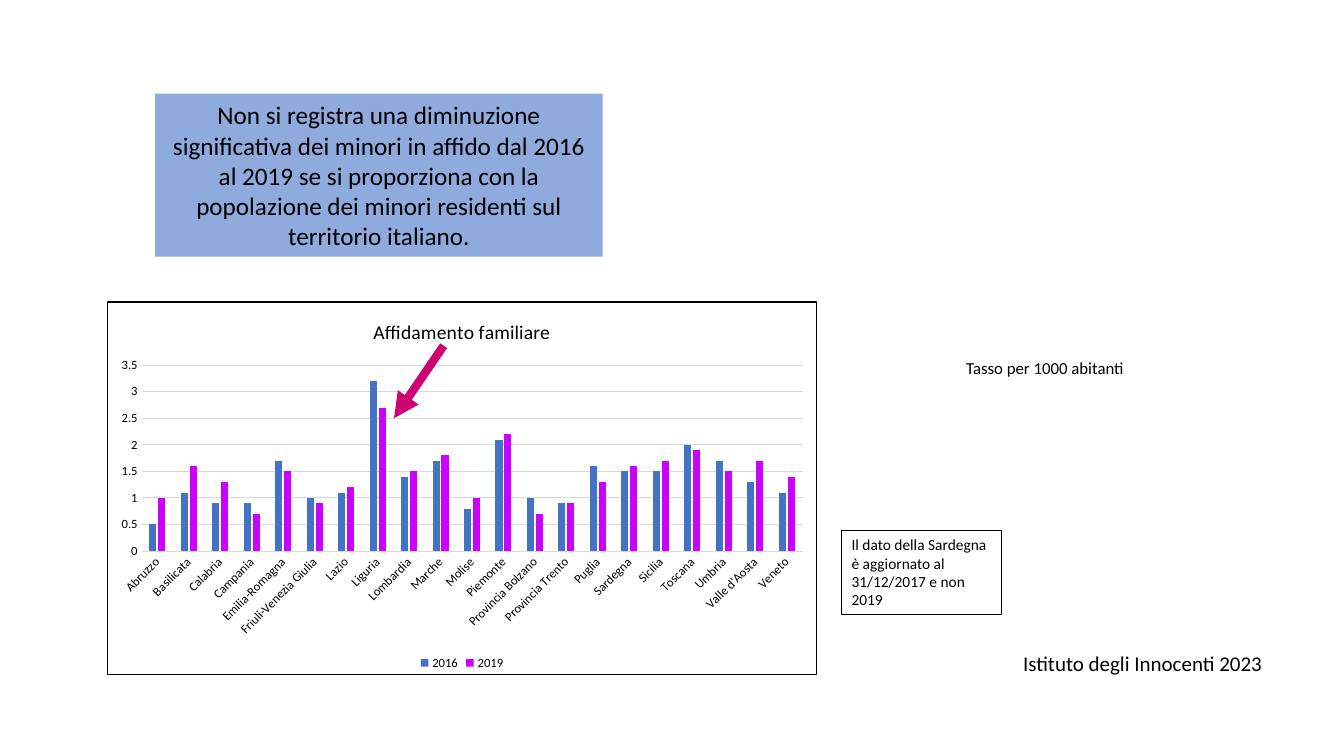
from lxml import etree
from pptx import Presentation
from pptx.chart.data import CategoryChartData
from pptx.dml.color import RGBColor
from pptx.enum.chart import XL_CHART_TYPE, XL_LEGEND_POSITION, XL_TICK_MARK
from pptx.enum.shapes import MSO_CONNECTOR, MSO_SHAPE
from pptx.enum.text import MSO_ANCHOR, MSO_AUTO_SIZE, PP_ALIGN
from pptx.oxml import parse_xml
from pptx.oxml.ns import qn
from pptx.util import Cm, Pt

COLUMNS = XL_CHART_TYPE.COLUMN_CLUSTERED
BOTTOM = XL_LEGEND_POSITION.BOTTOM
NO_TICK = XL_TICK_MARK.NONE
STRAIGHT = MSO_CONNECTOR.STRAIGHT
RECT = MSO_SHAPE.RECTANGLE
TOP, MIDDLE = MSO_ANCHOR.TOP, MSO_ANCHOR.MIDDLE
NO_FIT = MSO_AUTO_SIZE.NONE
LEFT, CENTER = PP_ALIGN.LEFT, PP_ALIGN.CENTER

FONT = "Calibri"
COLORS = {"black": "000000", "white": "FFFFFF", "grid": "D9D9D9", "box": "8FAADC",
          "2016": "4472C4", "2019": "CC00FF", "arrow": "CF0072"}


def set_font(font, size):
    font.name = FONT
    font.size = Pt(size)
    font.bold = False
    font.color.rgb = RGBColor.from_string(COLORS["black"])


def add_text(sp, text, size, align=LEFT, anchor=TOP, wrap=True):
    tf = sp.text_frame
    tf.word_wrap = wrap
    tf.auto_size = NO_FIT
    tf.vertical_anchor = anchor
    p = tf.paragraphs[0]
    p.alignment = align
    p.line_spacing = 1.0
    r = p.add_run()
    r.text = text
    set_font(r.font, size)


prs = Presentation()
prs.slide_width, prs.slide_height = Cm(33.87), Cm(19.05)
s = prs.slides.add_slide(prs.slide_layouts[5])

# Headline box
title = s.shapes.title
title.left, title.top, title.width, title.height = Cm(3.91), Cm(2.36), Cm(11.28), Cm(4.11)
title.fill.solid()
title.fill.fore_color.rgb = RGBColor.from_string(COLORS["box"])
add_text(title, "Non si registra una diminuzione significativa dei minori in affido "
         "dal 2016 al 2019 se si proporziona con la popolazione dei minori residenti "
         "sul territorio italiano.", 18, CENTER, MIDDLE)

# Rates by region: 2016, 2019
rates = {
    "Abruzzo": (0.5, 1), "Basilicata": (1.1, 1.6), "Calabria": (0.9, 1.3),
    "Campania": (0.9, 0.7), "Emilia-Romagna": (1.7, 1.5),
    "Friuli-Venezia Giulia": (1, 0.9), "Lazio": (1.1, 1.2), "Liguria": (3.2, 2.7),
    "Lombardia": (1.4, 1.5), "Marche": (1.7, 1.8), "Molise": (0.8, 1),
    "Piemonte": (2.1, 2.2), "Provincia Bolzano": (1, 0.7),
    "Provincia Trento": (0.9, 0.9), "Puglia": (1.6, 1.3), "Sardegna": (1.5, 1.6),
    "Sicilia": (1.5, 1.7), "Toscana": (2, 1.9), "Umbria": (1.7, 1.5),
    "Valle d'Aosta": (1.3, 1.7), "Veneto": (1.1, 1.4),
}
data = CategoryChartData()
data.categories = list(rates)
for year, values in zip(("2016", "2019"), zip(*rates.values())):
    data.add_series(year, values)
chart = s.shapes.add_chart(COLUMNS, Cm(2.69), Cm(7.59), Cm(17.91), Cm(9.42), data).chart
set_font(chart.font, 10)

# Chart title and legend
chart.has_title = True
r = chart.chart_title.text_frame.paragraphs[0].add_run()
r.text = "Affidamento familiare"
set_font(r.font, 14)
chart.has_legend = True
chart.legend.position = BOTTOM
chart.legend.include_in_layout = False
set_font(chart.legend.font, 9)

# Columns
plot = chart.plots[0]
plot.vary_by_categories = False
plot.gap_width, plot.overlap = 219, -27
for series in plot.series:
    series.format.fill.solid()
    series.format.fill.fore_color.rgb = RGBColor.from_string(COLORS[series.name])

# Axes
cat_axis, val_axis = chart.category_axis, chart.value_axis
for axis in (cat_axis, val_axis):
    axis.major_tick_mark = axis.minor_tick_mark = NO_TICK
    set_font(axis.tick_labels.font, 9)
val_axis.minimum_scale, val_axis.maximum_scale, val_axis.major_unit = 0, 3.5, 0.5
val_axis.tick_labels.number_format = "General"
val_axis.tick_labels.number_format_is_linked = False
val_axis.format.line.fill.background()
for line in (cat_axis.format.line, val_axis.major_gridlines.format.line):
    line.color.rgb = RGBColor.from_string(COLORS["grid"])
    line.width = Pt(0.75)
label_body = chart.element.xpath(".//c:catAx/c:txPr/a:bodyPr")[0]
label_body.set("rot", "-2700000")
label_body.set("vert", "horz")

# Chart frame
frame = parse_xml(
    '<c:spPr xmlns:c="http://schemas.openxmlformats.org/drawingml/2006/chart"'
    ' xmlns:a="http://schemas.openxmlformats.org/drawingml/2006/main">'
    f'<a:solidFill><a:srgbClr val="{COLORS["white"]}"/></a:solidFill>'
    f'<a:ln w="12700"><a:solidFill><a:srgbClr val="{COLORS["black"]}"/></a:solidFill></a:ln>'
    '</c:spPr>')
chart.element.find(qn("c:chart")).addnext(frame)

# Note on Sardegna
note = s.shapes.add_shape(RECT, Cm(21.21), Cm(13.36), Cm(4.03), Cm(2.13))
note.shadow.inherit = False
note.fill.background()
note.line.color.rgb = RGBColor.from_string(COLORS["black"])
note.line.width = Pt(0.75)
add_text(note, "Il dato della Sardegna è aggiornato al 31/12/2017 e non 2019", 11)

# Arrow to Liguria
arrow = s.shapes.add_connector(STRAIGHT, Cm(11.18), Cm(8.71), Cm(9.93), Cm(10.54))
arrow.line.color.rgb = RGBColor.from_string(COLORS["arrow"])
arrow.line.width = Pt(6)
etree.SubElement(arrow.line.fill and arrow.element.spPr.find(qn("a:ln")),
                 qn("a:tailEnd"), type="triangle")
etree.SubElement(arrow.element.spPr, qn("a:effectLst"))

# Source and unit
for text, x, y, w, h, size, align, wrap in (
        ("Istituto degli Innocenti 2023", 24.87, 16.26, 7.85, 0.89, 15, CENTER, True),
        ("Tasso per 1000 abitanti", 24.1, 8.89, 4.55, 0.76, 12, LEFT, False)):
    add_text(s.shapes.add_textbox(Cm(x), Cm(y), Cm(w), Cm(h)), text, size, align, wrap=wrap)

prs.save("out.pptx")
